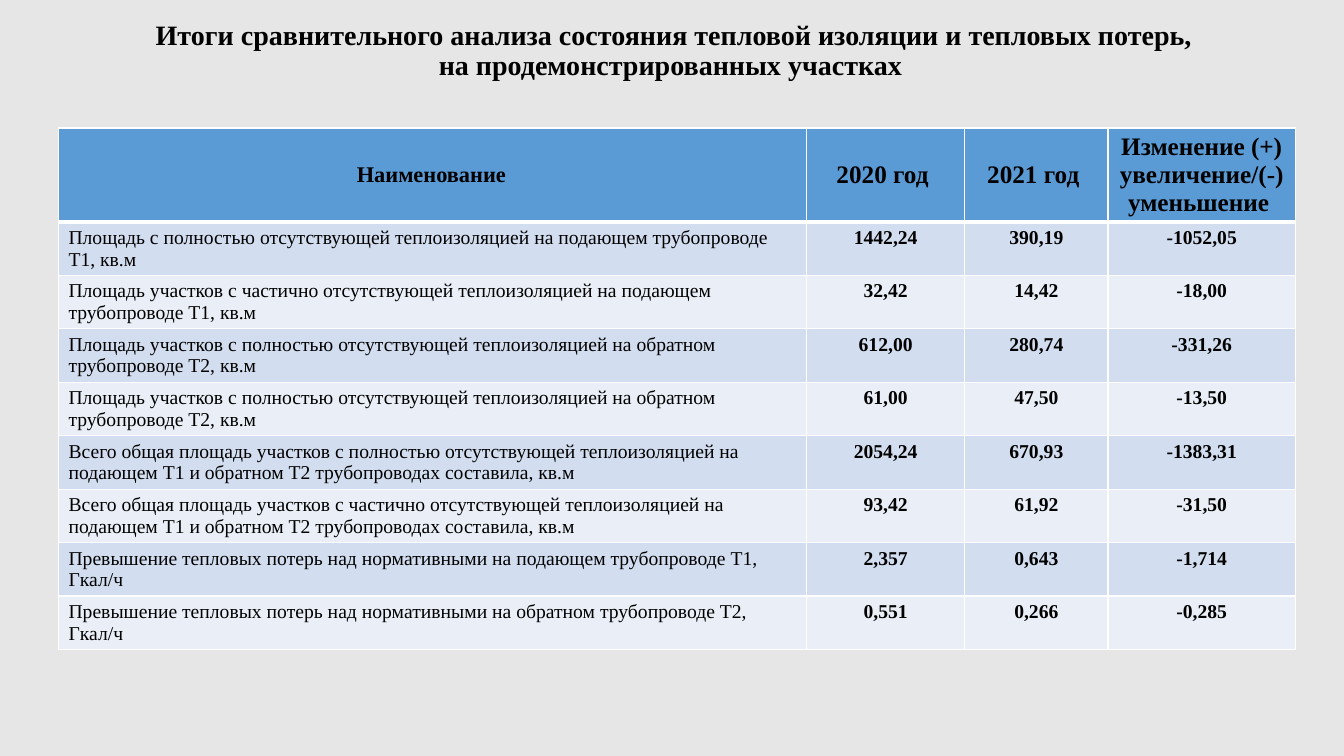
import pptx
import pptx.dml.color
import pptx.enum.text
import pptx.oxml
import pptx.oxml.ns
import pptx.util
from pptx.util import Inches

RGBColor = pptx.dml.color.RGBColor
ALIGN = pptx.enum.text.PP_ALIGN
ANCHOR = pptx.enum.text.MSO_ANCHOR

BACKGROUND = RGBColor(0xE7, 0xE6, 0xE6)
BLACK = RGBColor(0x00, 0x00, 0x00)
WHITE = RGBColor(0xFF, 0xFF, 0xFF)
HEADER_BLUE = RGBColor(0x5B, 0x9B, 0xD5)
BAND_DARK = RGBColor(0xD2, 0xDE, 0xEF)
BAND_LIGHT = RGBColor(0xEA, 0xEF, 0xF7)

TITLE = (
    "Итоги сравнительного анализа состояния тепловой изоляции "
    "и тепловых потерь, на продемонстрированных участках "
)
HEADERS = [
    "Наименование\t",
    "2020 год ",
    "2021 год ",
    "Изменение (+) увеличение/(-) уменьшение ",
]
RESULTS = [
    ("Площадь с полностью отсутствующей теплоизоляцией на подающем трубопроводе Т1, кв.м",
     "1442,24", "390,19", "-1052,05"),
    ("Площадь участков с частично отсутствующей теплоизоляцией на подающем трубопроводе Т1, кв.м",
     "32,42", "14,42", "-18,00"),
    ("Площадь участков с полностью отсутствующей теплоизоляцией на обратном трубопроводе Т2, кв.м",
     "612,00", "280,74", "-331,26"),
    ("Площадь участков с полностью отсутствующей теплоизоляцией на обратном трубопроводе Т2, кв.м",
     "61,00", "47,50", "-13,50"),
    ("Всего общая площадь участков с полностью отсутствующей теплоизоляцией "
     "на подающем Т1 и обратном Т2 трубопроводах составила, кв.м",
     "2054,24", "670,93", "-1383,31"),
    ("Всего общая площадь участков с частично отсутствующей теплоизоляцией "
     "на подающем Т1 и обратном Т2 трубопроводах составила, кв.м",
     "93,42", "61,92", "-31,50"),
    ("Превышение тепловых потерь над нормативными на подающем трубопроводе Т1, Гкал/ч",
     "2,357", "0,643", "-1,714"),
    ("Превышение тепловых потерь над нормативными на обратном трубопроводе Т2, Гкал/ч",
     "0,551", "0,266", "-0,285"),
]
COLUMN_WIDTHS = [7.42, 1.57, 1.42, 1.86]
HEADER_HEIGHT = 0.92
ROW_HEIGHT = 0.53


class SlideBuilder:
    font_name = "Times New Roman"

    def __init__(self, page):
        self.page = page
        page.background.fill.solid()
        page.background.fill.fore_color.rgb = BACKGROUND

    def text(self, frame, text, size, bold=True, align=ALIGN.CENTER):
        para = frame.paragraphs[0]
        para.alignment = align
        span = para.add_run()
        span.text = text
        span.font.name = self.font_name
        span.font.size = pptx.util.Pt(size)
        span.font.bold = bold
        span.font.color.rgb = BLACK
        return para

    def title(self, text, left, top, width, height):
        box = self.page.shapes.title
        box.left, box.top = Inches(left), Inches(top)
        box.width, box.height = Inches(width), Inches(height)
        frame = box.text_frame
        frame.word_wrap = True
        frame.auto_size = pptx.enum.text.MSO_AUTO_SIZE.NONE
        frame.vertical_anchor = ANCHOR.MIDDLE
        para = self.text(frame, text, 20)
        para.line_spacing = 0.9

    def borders(self, cell, bottom, top):
        properties = cell._tc.get_or_add_tcPr()
        for side, points in (("L", 1), ("R", 1), ("T", top), ("B", bottom)):
            properties.append(pptx.oxml.parse_xml(
                f'<a:ln{side} {pptx.oxml.ns.nsdecls("a")} w="{int(pptx.util.Pt(points))}">'
                f'<a:solidFill><a:srgbClr val="{WHITE}"/></a:solidFill></a:ln{side}>'
            ))

    def cell(self, cell, text, fill, size, bold=True, align=ALIGN.CENTER,
             anchor=ANCHOR.TOP, bottom=1, top=1):
        self.borders(cell, bottom, top)
        cell.fill.solid()
        cell.fill.fore_color.rgb = fill
        cell.vertical_anchor = anchor
        self.text(cell.text_frame, text, size, bold, align)

    def table(self, left, top, headers, rows):
        height = HEADER_HEIGHT + ROW_HEIGHT * len(rows)
        grid = self.page.shapes.add_table(
            len(rows) + 1, len(headers), Inches(left), Inches(top),
            Inches(sum(COLUMN_WIDTHS)), Inches(height),
        ).table
        for column, width in zip(grid.columns, COLUMN_WIDTHS):
            column.width = Inches(width)
        for row in grid.rows:
            row.height = Inches(ROW_HEIGHT)
        grid.rows[0].height = Inches(HEADER_HEIGHT)

        for column, text in enumerate(headers):
            last = column == len(headers) - 1
            self.cell(grid.cell(0, column), text, HEADER_BLUE,
                      size=18 if column else 16,
                      anchor=ANCHOR.TOP if last else ANCHOR.MIDDLE, bottom=3)
        for number, values in enumerate(rows, start=1):
            fill = BAND_DARK if number % 2 else BAND_LIGHT
            for column, text in enumerate(values):
                self.cell(grid.cell(number, column), text, fill, size=14,
                          bold=column > 0,
                          align=ALIGN.CENTER if column else ALIGN.LEFT,
                          top=3 if number == 1 else 1)


def main():
    deck = pptx.Presentation()
    deck.slide_width = Inches(13.33)
    deck.slide_height = Inches(7.5)
    builder = SlideBuilder(deck.slides.add_slide(deck.slide_layouts[5]))
    builder.title(TITLE, 1.3, 0.15, 10.77, 0.72)
    builder.table(0.58, 1.27, HEADERS, RESULTS)
    deck.save("out.pptx")


if __name__ == "__main__":
    main()
